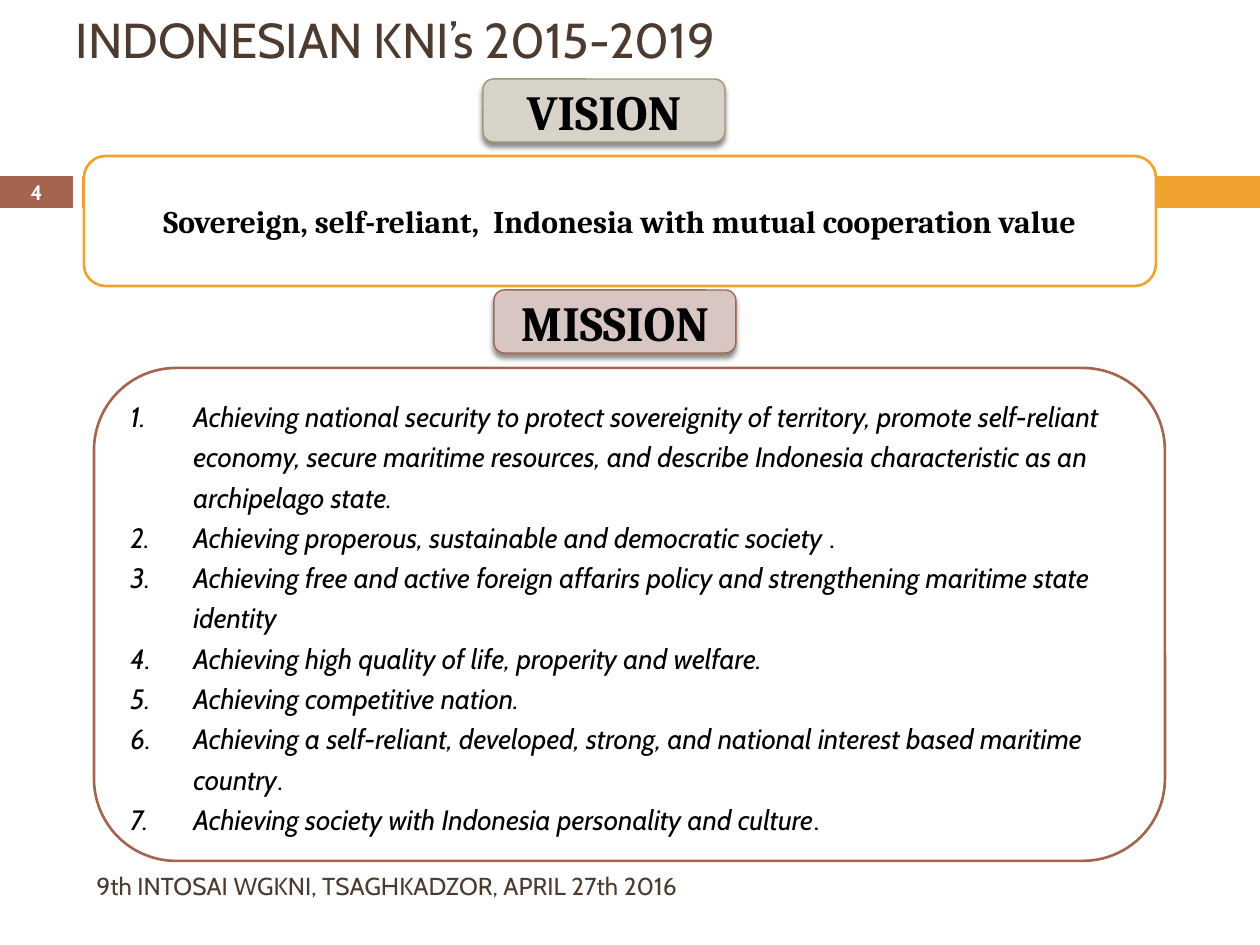
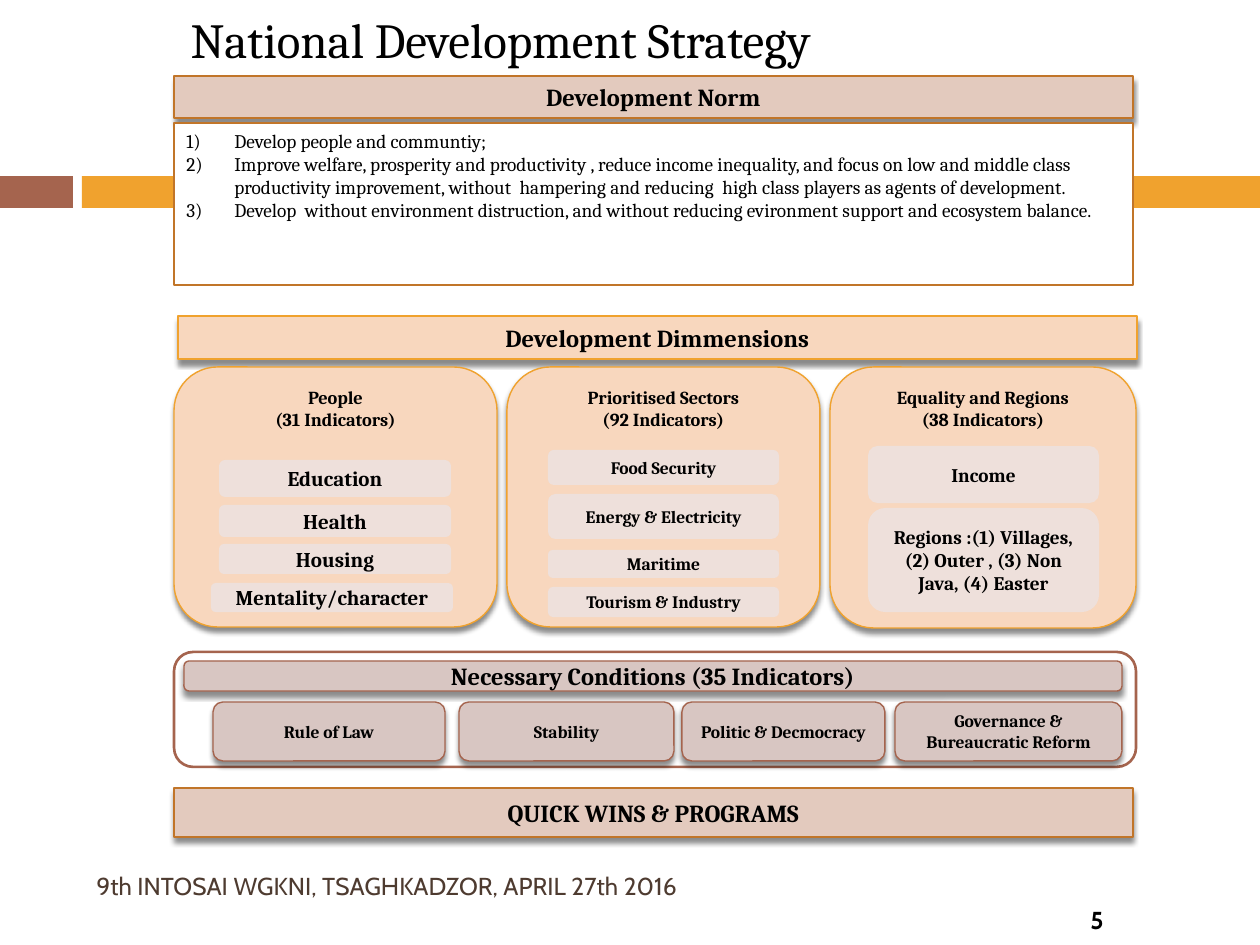
from dataclasses import dataclass
from typing import Optional

from lxml import etree
from pptx import Presentation
from pptx.dml.color import RGBColor
from pptx.enum.shapes import MSO_SHAPE
from pptx.enum.text import MSO_ANCHOR, MSO_AUTO_SIZE, PP_ALIGN
from pptx.oxml.ns import qn
from pptx.util import Pt

RECT, ROUNDED = MSO_SHAPE.RECTANGLE, MSO_SHAPE.ROUNDED_RECTANGLE
LEFT, CENTER = PP_ALIGN.LEFT, PP_ALIGN.CENTER
TOP, MIDDLE = MSO_ANCHOR.TOP, MSO_ANCHOR.MIDDLE

EMU_PER_PX = 914400 / 126
TITLE_ONLY = 5
SANS, SERIF = "Cabin", "Cambria"

WHITE = RGBColor(0xFF, 0xFF, 0xFF)
BLACK = RGBColor(0x00, 0x00, 0x00)
BROWN = RGBColor(0x4E, 0x3B, 0x30)
RUST = RGBColor(0xA5, 0x64, 0x4E)
AMBER = RGBColor(0xF0, 0xA2, 0x2E)
COPPER = RGBColor(0xC1, 0x75, 0x29)
KHAKI = RGBColor(0xA1, 0x95, 0x74)
PALE_KHAKI = RGBColor(0xD7, 0xD3, 0xC9)
PALE_RUST = RGBColor(0xD8, 0xC6, 0xC2)
PALE_COPPER = RGBColor(0xE3, 0xCA, 0xBE)
PALE_AMBER = RGBColor(0xF8, 0xD7, 0xBE)
BLUSH = RGBColor(0xEE, 0xE0, 0xDB)


@dataclass(frozen=True)
class Look:
    fill: RGBColor
    line: Optional[RGBColor] = None
    width: float = 0.79
    raised: bool = False


@dataclass(frozen=True)
class Type:
    size: float
    face: str = SERIF
    color: RGBColor = BLACK
    bold: bool = False
    italic: bool = False


RUST_BAND, AMBER_BAND = Look(RUST), Look(AMBER)
VISION_FRAME = Look(WHITE, AMBER, 1.5)
RUST_FRAME = Look(WHITE, RUST, 1.5)
NORM_FRAME = Look(WHITE, COPPER, 1.5)
VISION_TAB = Look(PALE_KHAKI, KHAKI, raised=True)
RUST_TAB = Look(PALE_RUST, RUST, raised=True)
COPPER_BAR = Look(PALE_COPPER, COPPER, raised=True)
AMBER_PANEL = Look(PALE_AMBER, AMBER, raised=True)
TOPIC = Look(BLUSH)

TAB_TYPE = Type(28, bold=True)
BAR_TYPE = Type(14, bold=True)

FOOTER = "9th INTOSAI WGKNI, TSAGHKADZOR, APRIL 27th 2016"

# Each mission is its italic wording and an upright ending.
MISSIONS = [
    ("Achieving national security to protect sovereignity of territory, promote "
     "self-reliant economy, secure maritime resources, and describe Indonesia "
     "characteristic as an archipelago state.", ""),
    ("Achieving properous, sustainable and democratic society ", "."),
    ("Achieving free and active foreign affarirs policy and strengthening "
     "maritime state identity", ""),
    ("Achieving high quality of life, properity and welfare.", ""),
    ("Achieving competitive nation.", ""),
    ("Achieving a self-reliant, developed, strong, and national interest based "
     "maritime country", "."),
    ("Achieving society with Indonesia personality and culture", "."),
]

NORMS = [
    "Develop people and communtiy;",
    "Improve welfare, prosperity and productivity , reduce income inequality, and "
    "focus on low and middle class productivity improvement, without  hampering "
    "and reducing  high class players as agents of development.",
    "Develop  without environment distruction, and without reducing evironment "
    "support and ecosystem balance.",
]

# Panel heading, panel box, topic size, topics as (label, left, top, width, height).
DIMENSIONS = [
    (["People", "(31 Indicators)"], (174, 367, 323, 260), 12, [
        ("Education", 219, 460, 232, 37),
        ("Health", 219, 505, 232, 32),
        ("Housing", 219, 544, 232, 30),
        ("Mentality/character", 211, 583, 242, 29)]),
    (["Prioritised Sectors", "(92 Indicators)"], (507, 367, 313, 260), 10, [
        ("Food Security", 548, 450, 231, 35),
        ("Energy & Electricity", 548, 494, 231, 45),
        ("Maritime", 548, 550, 231, 28),
        ("Tourism & Industry", 548, 587, 231, 30)]),
    (["Equality and Regions", "(38 Indicators)"], (830, 367, 306, 261), 11, [
        ("Income", 868, 446, 231, 57),
        ("Regions :(1) Villages, (2) Outer , (3) Non Java, (4) Easter",
         868, 508, 231, 104)]),
]

# Label, left, width.
CONDITIONS = [
    ("Rule of Law", 213, 232),
    ("Stability", 459, 215),
    ("Politic & Decmocracy", 682, 203),
    ("Governance & Bureaucratic Reform", 895, 227),
]


def px(length):
    return round(length * EMU_PER_PX)


def style_paragraph(paragraph, kind, align):
    paragraph.alignment = align
    font = paragraph.font
    font.name, font.size = kind.face, Pt(kind.size)
    font.bold, font.italic = kind.bold, kind.italic
    font.color.rgb = kind.color


def number_paragraph(paragraph, scheme, indent):
    """Add automatic numbering; must run before the paragraph font is set."""
    properties = paragraph._p.get_or_add_pPr()
    properties.set("marL", str(px(indent)))
    properties.set("indent", str(-px(indent)))
    etree.SubElement(properties, qn("a:buFont"), typeface="+mj-lt")
    etree.SubElement(properties, qn("a:buAutoNum"), type=scheme)


def paragraphs_for(frame, count):
    """Return count paragraphs of a fresh text frame."""
    return [frame.paragraphs[0]] + [frame.add_paragraph() for _ in range(count - 1)]


def write_lines(frame, lines, kind, align=CENTER, anchor=MIDDLE):
    frame.word_wrap = True
    frame.vertical_anchor = anchor
    for paragraph, line in zip(paragraphs_for(frame, len(lines)), lines):
        paragraph.add_run().text = line
        style_paragraph(paragraph, kind, align)


def write_numbered(frame, items, kind, scheme, indent, spacing=1.0, anchor=MIDDLE):
    """Write (text, upright ending) items as a numbered list."""
    frame.word_wrap = True
    frame.vertical_anchor = anchor
    for paragraph, (text, ending) in zip(paragraphs_for(frame, len(items)), items):
        number_paragraph(paragraph, scheme, indent)
        paragraph.line_spacing = spacing
        style_paragraph(paragraph, kind, LEFT)
        paragraph.add_run().text = text
        if ending:
            upright = paragraph.add_run()
            upright.text = ending
            upright.font.italic = False


def cast_shadow(shape):
    effects = shape._element.spPr.find(qn("a:effectLst"))
    shadow = etree.SubElement(effects, qn("a:outerShdw"), blurRad=str(Pt(3)),
                              dist=str(Pt(2.4)), dir="5400000", rotWithShape="0")
    color = etree.SubElement(shadow, qn("a:srgbClr"), val=str(BLACK))
    etree.SubElement(color, qn("a:alpha"), val="45000")


def add_box(slide, geometry, box, look, lines=(), kind=None, anchor=MIDDLE):
    shape = slide.shapes.add_shape(geometry, *map(px, box))
    shape.shadow.inherit = False
    shape.fill.solid()
    shape.fill.fore_color.rgb = look.fill
    if look.line is None:
        shape.line.fill.background()
    else:
        shape.line.color.rgb = look.line
        shape.line.width = Pt(look.width)
    if look.raised:
        cast_shadow(shape)
    if lines:
        write_lines(shape.text_frame, lines, kind, anchor=anchor)
    return shape


def add_label(slide, box, text, kind, align=CENTER):
    label = slide.shapes.add_textbox(*map(px, box))
    write_lines(label.text_frame, [text], kind, align)


def add_base_slide(deck, title, title_box, title_type):
    """Add a slide with its title, the two side bands and the footer."""
    slide = deck.slides.add_slide(deck.slide_layouts[TITLE_ONLY])
    heading = slide.shapes.title
    heading.left, heading.top, heading.width, heading.height = map(px, title_box)
    heading.text_frame.auto_size = MSO_AUTO_SIZE.NONE
    write_lines(heading.text_frame, [title], title_type, LEFT)
    add_box(slide, RECT, (0, 176, 73, 32), RUST_BAND)
    add_box(slide, RECT, (82, 176, 1178, 32), AMBER_BAND)
    add_label(slide, (84, 861, 747, 50), FOOTER, Type(14, SANS, BROWN), LEFT)
    return slide


def build_vision_and_mission(deck):
    slide = add_base_slide(deck, "INDONESIAN KNI’s 2015-2019", (63, 0, 1134, 78),
                           Type(28, SANS, BROWN))
    add_label(slide, (0, 175, 73, 34), "4", Type(12, SANS, WHITE, bold=True))
    add_box(slide, ROUNDED, (84, 156, 1072, 130), VISION_FRAME,
            ["Sovereign, self-reliant,  Indonesia with mutual cooperation value"],
            Type(18, bold=True))
    add_box(slide, ROUNDED, (483, 79, 242, 63), VISION_TAB, ["VISION"], TAB_TYPE)
    missions = add_box(slide, ROUNDED, (94, 368, 1071, 493), RUST_FRAME)
    write_numbered(missions.text_frame, MISSIONS, Type(16, SANS, italic=True),
                   "arabicPeriod", 63, spacing=1.2)
    add_box(slide, ROUNDED, (494, 290, 242, 63), RUST_TAB, ["MISSION"], TAB_TYPE)


def build_strategy(deck):
    slide = add_base_slide(deck, "National Development Strategy",
                           (178, -10, 974, 97), Type(28))
    add_label(slide, (955, 895, 284, 50), "5", Type(14, SANS, bold=True))

    add_box(slide, RECT, (174, 76, 959, 42), COPPER_BAR, ["Development Norm"], BAR_TYPE)
    norms = add_box(slide, RECT, (174, 123, 959, 162), NORM_FRAME)
    write_numbered(norms.text_frame, [(norm, "") for norm in NORMS], Type(11),
                   "arabicParenR", 48, anchor=TOP)

    add_box(slide, RECT, (178, 316, 959, 43), AMBER_PANEL,
            ["Development Dimmensions"], BAR_TYPE)
    for heading, panel, topic_size, topics in DIMENSIONS:
        add_box(slide, ROUNDED, panel, AMBER_PANEL, heading,
                Type(10.5, bold=True), TOP)
        for topic, *box in topics:
            add_box(slide, ROUNDED, box, TOPIC, [topic], Type(topic_size, bold=True))

    add_box(slide, ROUNDED, (174, 652, 962, 115), RUST_FRAME)
    add_box(slide, ROUNDED, (184, 661, 938, 30), RUST_TAB,
            ["Necessary Conditions (35 Indicators)"], BAR_TYPE)
    for condition, left, width in CONDITIONS:
        add_box(slide, ROUNDED, (left, 702, width, 59), RUST_TAB, [condition],
                Type(10, bold=True))

    add_box(slide, RECT, (174, 788, 959, 49), COPPER_BAR,
            ["QUICK WINS & PROGRAMS"], BAR_TYPE)


def main():
    deck = Presentation()
    deck.slide_width, deck.slide_height = px(1260), px(945)
    build_vision_and_mission(deck)
    build_strategy(deck)
    deck.save("out.pptx")


if __name__ == "__main__":
    main()
